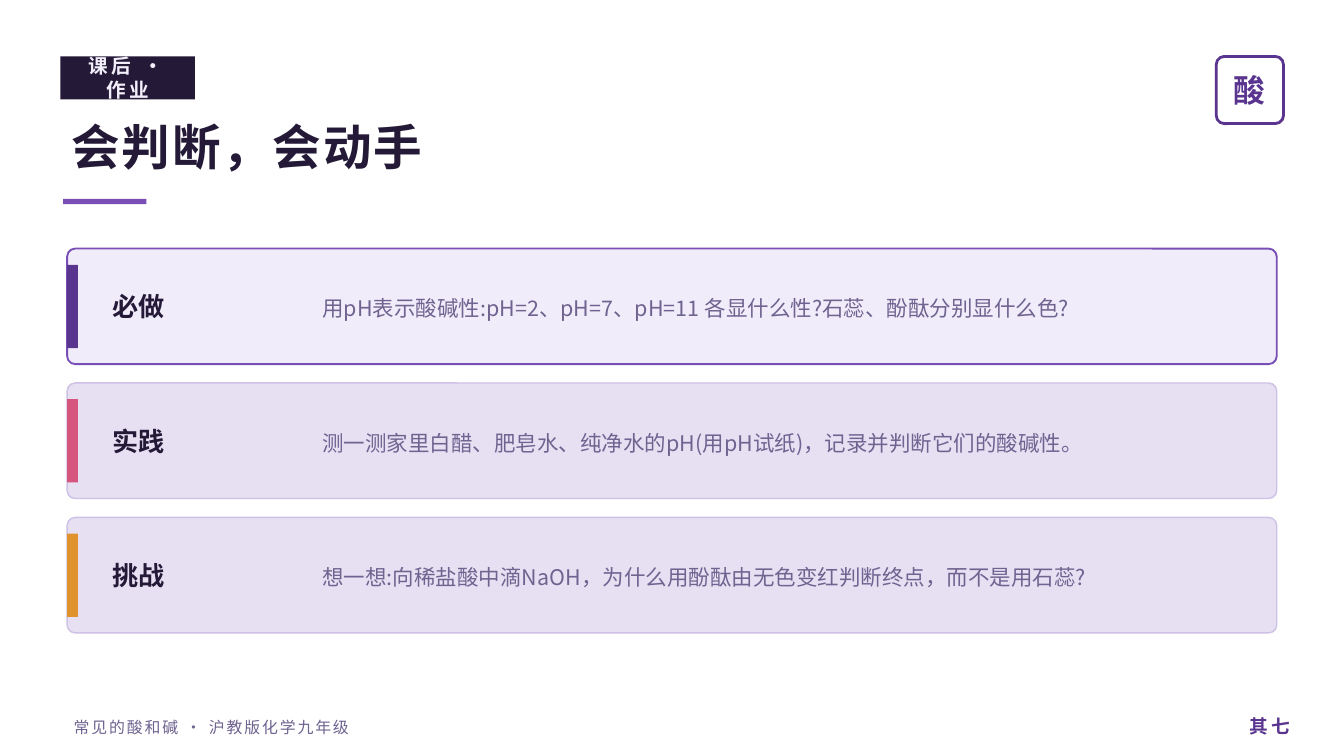
from lxml import etree
from pptx import Presentation
from pptx.dml.color import RGBColor
from pptx.enum import shapes, text
from pptx.oxml.ns import qn
from pptx.util import Inches, Pt

FONT = "Noto Sans CJK SC"
COLORS = {
    "ink": "241A38", "pale": "F2EEFA", "violet": "7A4FB5", "deep": "5A3590",
    "muted": "6F6390", "lead": "F1ECFA", "panel": "E7E0F3", "edge": "CDC1E6",
    "rose": "D6557F", "amber": "E0922C",
}
LEFT, TOP, WIDTH, HEIGHT, PITCH = 0.5, 1.85, 9, 0.86, 1

deck = Presentation()
deck.slide_width, deck.slide_height = Inches(10), Inches(10 * 9 / 16)
slide = deck.slides.add_slide(deck.slide_layouts[5])


def block(box, fill=None, line=None, weight=1, corner=None):
    kind = shapes.MSO_SHAPE.ROUNDED_RECTANGLE if corner else shapes.MSO_SHAPE.RECTANGLE
    shape = slide.shapes.add_shape(kind, *map(Inches, box))
    shape.shadow.inherit = False
    if corner:
        shape.adjustments[0] = corner
    if fill:
        shape.fill.solid()
        shape.fill.fore_color.rgb = RGBColor.from_string(COLORS[fill])
    else:
        shape.fill.background()
    if line:
        shape.line.color.rgb = RGBColor.from_string(COLORS[line])
        shape.line.width = Pt(weight)
    else:
        shape.line.fill.background()


def write(box, words, size, color, bold=False, align="LEFT", tracking=0, leading=None, holder=None):
    left, top, width, height = map(Inches, box)
    holder = holder or slide.shapes.add_textbox(left, top, width, height)
    holder.left, holder.top, holder.width, holder.height = left, top, width, height
    frame = holder.text_frame
    frame.text = words
    frame.word_wrap = True
    frame.auto_size = text.MSO_AUTO_SIZE.NONE
    frame.vertical_anchor = text.MSO_ANCHOR.MIDDLE
    paragraph = frame.paragraphs[0]
    paragraph.alignment = getattr(text.PP_ALIGN, align)
    if leading:
        paragraph.line_spacing = Pt(leading)
    font = paragraph.font
    font.name, font.size, font.bold = FONT, Pt(size), bold
    font.color.rgb = RGBColor.from_string(COLORS[color])
    defaults = paragraph._p.pPr.find(qn("a:defRPr"))
    etree.SubElement(defaults, qn("a:ea")).set("typeface", FONT)
    if tracking:
        defaults.set("spc", str(tracking * 100))


block((0.45, 0.42, 1, 0.32), "ink")
write((0.45, 0.41, 1, 0.34), "课后 · 作业", 10.5, "pale", True, "CENTER", 2)
write((0.43, 0.78, 9, 0.62), "会判断，会动手", 26, "ink", True, tracking=1, holder=slide.shapes.title)
block((0.47, 1.48, 0.62, 0.04), "violet")
block((9.05, 0.42, 0.5, 0.5), line="deep", weight=1.5, corner=0.12)
write((9.05, 0.41, 0.5, 0.52), "酸", 17, "deep", True, "CENTER")

tasks = [
    ("必做", "用pH表示酸碱性:pH=2、pH=7、pH=11 各显什么性?石蕊、酚酞分别显什么色?",
     "deep", "lead", "violet", 1),
    ("实践", "测一测家里白醋、肥皂水、纯净水的pH(用pH试纸)，记录并判断它们的酸碱性。",
     "rose", "panel", "edge", 0.75),
    ("挑战", "想一想:向稀盐酸中滴NaOH，为什么用酚酞由无色变红判断终点，而不是用石蕊?",
     "amber", "panel", "edge", 0.75),
]
for row, (level, task, accent, fill, edge, weight) in enumerate(tasks):
    top = TOP + row * PITCH
    block((LEFT, top, WIDTH, HEIGHT), fill, edge, weight, 0.07)
    block((LEFT, top + 0.12, 0.08, HEIGHT - 0.24), accent)
    write((LEFT + 0.24, top + 0.1, 1.4, HEIGHT - 0.2), level, 14, "ink", True)
    write((LEFT + 1.8, top + 0.08, 7, HEIGHT - 0.16), task, 11.5, "muted", leading=16)

write((0.45, 5.26, 6.6, 0.3), "常见的酸和碱 · 沪教版化学九年级", 8.5, "muted", tracking=1)
write((9.1, 5.24, 0.6, 0.32), "其 七", 10, "deep", True, "RIGHT")

deck.save("out.pptx")
